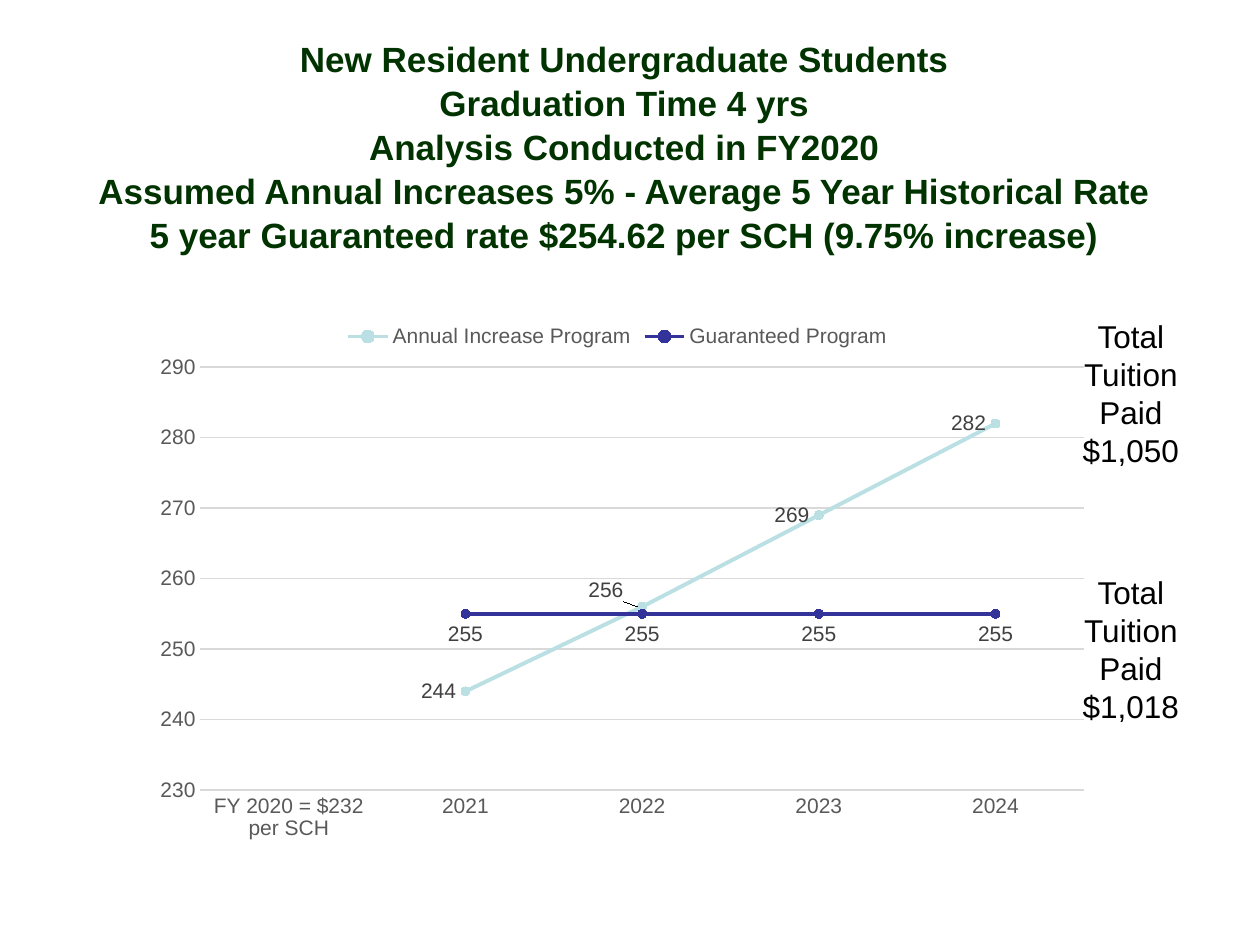
from lxml.etree import SubElement
from pptx import Presentation
from pptx.chart.data import CategoryChartData
from pptx.dml.color import RGBColor
from pptx.enum.chart import (XL_CHART_TYPE, XL_LABEL_POSITION, XL_LEGEND_POSITION,
                             XL_MARKER_STYLE, XL_TICK_MARK)
from pptx.enum.text import MSO_ANCHOR, PP_ALIGN
from pptx.oxml.ns import qn
from pptx.util import Inches, Pt

DARK_GREEN = RGBColor(0x00, 0x33, 0x00)
BLACK = RGBColor(0x00, 0x00, 0x00)
AXIS_GRAY = RGBColor(0x59, 0x59, 0x59)
LABEL_GRAY = RGBColor(0x40, 0x40, 0x40)
GRID_GRAY = RGBColor(0xD9, 0xD9, 0xD9)
PALE_TEAL = RGBColor(0xBB, 0xE0, 0xE3)
INDIGO = RGBColor(0x33, 0x33, 0x99)
WHOLE_NUMBER = "#,##0"


def set_font(font, size, color, bold=False):
    font.name = "Arial"
    font.size = Pt(size)
    font.bold = bold
    font.color.rgb = color


def add_layout(parent, index, **settings):
    layout = SubElement(parent, qn("c:layout"))
    parent.insert(index, layout)
    manual = SubElement(layout, qn("c:manualLayout"))
    for name, value in settings.items():
        SubElement(manual, qn(f"c:{name}")).set("val", str(value))


prs = Presentation()
prs.slide_width, prs.slide_height = Inches(10), Inches(7.5)
slide = prs.slides.add_slide(prs.slide_layouts[5])

title = slide.shapes.title
title.left, title.top = Inches(0.33), Inches(0.42)
title.width, title.height = Inches(9.25), Inches(1.47)
title.text_frame.vertical_anchor = MSO_ANCHOR.MIDDLE
title.text_frame.text = "\v".join([
    "New Resident Undergraduate Students",
    "Graduation Time 4 yrs",
    "Analysis Conducted in FY2020",
    "Assumed Annual Increases 5% - Average 5 Year Historical Rate",
    "5 year Guaranteed rate $254.62 per SCH (9.75% increase)",
])
heading = title.text_frame.paragraphs[0]
heading.alignment = PP_ALIGN.CENTER
heading.line_spacing = 1.05
set_font(heading.font, 20, DARK_GREEN, bold=True)

rates = CategoryChartData(number_format=WHOLE_NUMBER)
rates.categories = ["FY 2020 = $232 per SCH", "2021", "2022", "2023", "2024"]
rates.add_series("Annual Increase Program", [None, 244, 256, 269, 282])
rates.add_series("Guaranteed Program", [None, 255, 255, 255, 255])
chart = slide.shapes.add_chart(
    XL_CHART_TYPE.LINE_MARKERS, Inches(1.19), Inches(2.47),
    Inches(7.42), Inches(4.35), rates).chart
set_font(chart.font, 10, BLACK)
chart.has_title = False
chart.has_legend = True
chart.legend.position = XL_LEGEND_POSITION.TOP
chart.legend.include_in_layout = False
set_font(chart.legend.font, 12, AXIS_GRAY)

plot_area = chart.plots[0]._element.getparent()
for automatic in plot_area.findall(qn("c:layout")):
    plot_area.remove(automatic)
add_layout(plot_area, 0, layoutTarget="inner", xMode="edge", yMode="edge",
           x=0.054, y=0.102, w=0.945, h=0.772)

for axis in (chart.category_axis, chart.value_axis):
    axis.major_tick_mark = axis.minor_tick_mark = XL_TICK_MARK.NONE
    set_font(axis.tick_labels.font, 12, AXIS_GRAY)
years, dollars = chart.category_axis, chart.value_axis
years.format.line.color.rgb = GRID_GRAY
years.format.line.width = Pt(0.75)
dollars.format.line.fill.background()
dollars.minimum_scale, dollars.maximum_scale, dollars.major_unit = 230, 290, 10
dollars.tick_labels.number_format = WHOLE_NUMBER
dollars.tick_labels.number_format_is_linked = False
dollars.major_gridlines.format.line.color.rgb = GRID_GRAY
dollars.major_gridlines.format.line.width = Pt(0.75)

for program, color, position in zip(
        chart.plots[0].series, (PALE_TEAL, INDIGO),
        (XL_LABEL_POSITION.LEFT, XL_LABEL_POSITION.BELOW)):
    program.smooth = False
    program.format.line.color.rgb = color
    program.format.line.width = Pt(2.25)
    program.marker.style = XL_MARKER_STYLE.CIRCLE
    program.marker.size = 5
    program.marker.format.fill.solid()
    program.marker.format.fill.fore_color.rgb = color
    program.marker.format.line.color.rgb = color
    labels = program.data_labels
    labels.show_value = True
    labels.position = position
    labels.number_format = WHOLE_NUMBER
    labels.number_format_is_linked = False
    set_font(labels.font, 12, LABEL_GRAY)

annual = chart.plots[0].series[0]
crossing = annual.points[2].data_label
crossing.position = XL_LABEL_POSITION.LEFT
set_font(crossing.font, 12, LABEL_GRAY)
add_layout(annual.data_labels._element.find(qn("c:dLbl")), 1, x=-0.01, y=-0.03)

for top, total in ((4.5, "$1,018"), (2.47, "$1,050")):
    note = slide.shapes.add_textbox(
        Inches(8.27), Inches(top), Inches(1.41), Inches(1.31)).text_frame
    note.word_wrap = True
    note.text = f"Total Tuition\nPaid\n{total}"
    for line in note.paragraphs:
        line.alignment = PP_ALIGN.CENTER
        set_font(line.font, 18, BLACK)

prs.save("out.pptx")
